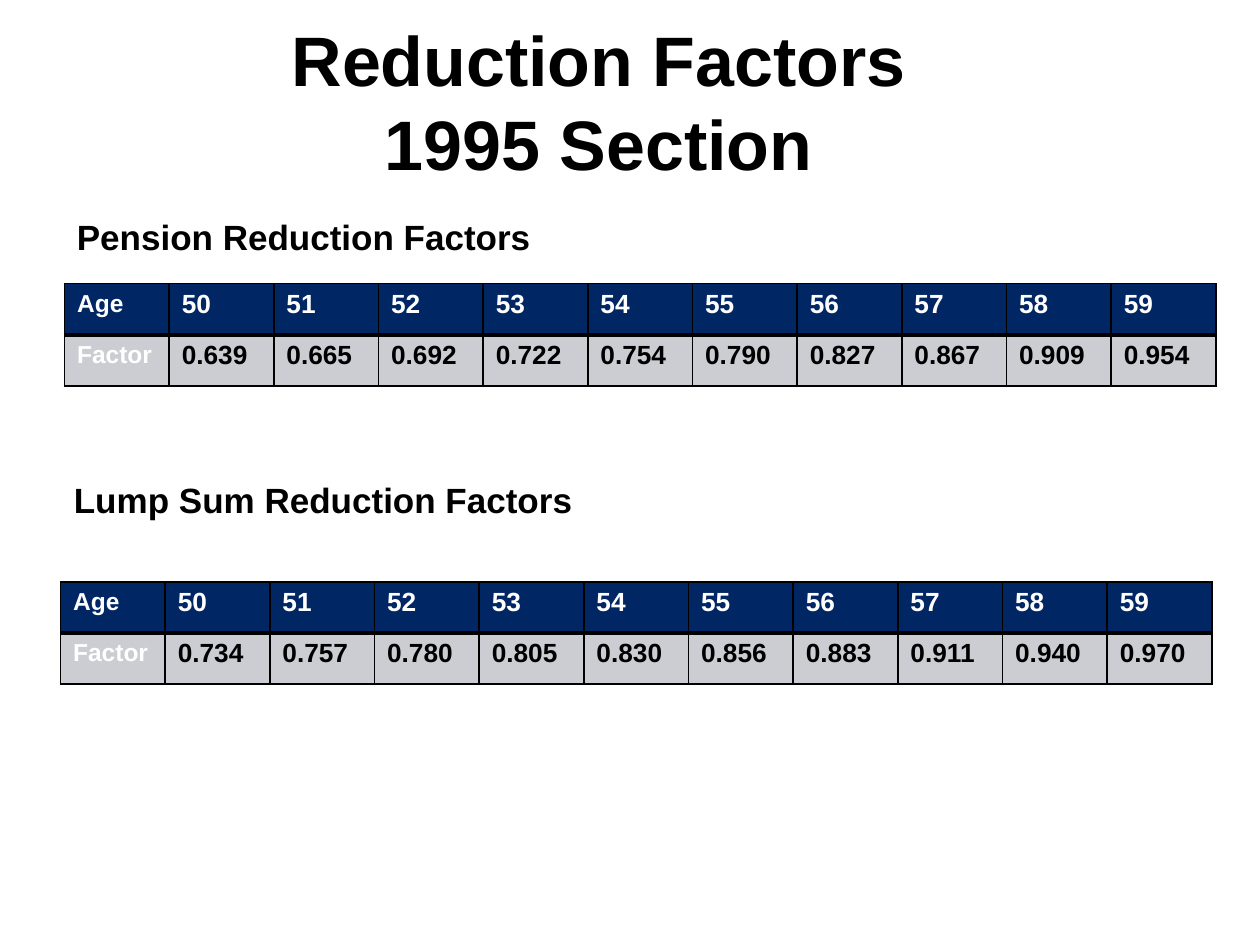
"""Build the slide of pension and lump sum reduction factors."""
from lxml import etree
from pptx import Presentation
from pptx.dml.color import RGBColor
from pptx.enum.text import MSO_ANCHOR, MSO_AUTO_SIZE, PP_ALIGN
from pptx.oxml.ns import qn
from pptx.util import Cm, Pt

MIDDLE = MSO_ANCHOR.MIDDLE
GROW = MSO_AUTO_SIZE.SHAPE_TO_FIT_TEXT
FIXED = MSO_AUTO_SIZE.NONE
CENTER = PP_ALIGN.CENTER

BLACK = RGBColor(0x00, 0x00, 0x00)
WHITE = RGBColor(0xFF, 0xFF, 0xFF)
NAVY = RGBColor(0x00, 0x26, 0x64)
GREY = RGBColor(0xCC, 0xCD, 0xD3)

AGES = [str(age) for age in range(50, 60)]
PENSION = "0.639 0.665 0.692 0.722 0.754 0.790 0.827 0.867 0.909 0.954".split()
LUMP_SUM = "0.734 0.757 0.780 0.805 0.830 0.856 0.883 0.911 0.940 0.970".split()


class FactorSlide:
    col_width = Cm(2.11)
    row_height = Cm(1.03)
    thin, thick = Pt(1), Pt(3)

    def __init__(self, prs):
        self.slide = prs.slides.add_slide(prs.slide_layouts[5])

    def set_text(self, tf, text, size, color=BLACK):
        tf.text = text
        p = tf.paragraphs[0]
        formats = {"name": "Arial", "size": Pt(size), "bold": True}
        for r in p.runs:
            for key, value in formats.items():
                setattr(r.font, key, value)
            r.font.color.rgb = color
        return p

    def title(self, text, left, top, width, height):
        sp = self.slide.shapes.title
        sp.left, sp.top, sp.width, sp.height = map(Cm, (left, top, width, height))
        tf = sp.text_frame
        tf.auto_size = FIXED
        tf.vertical_anchor = MIDDLE
        self.set_text(tf, text, 40).alignment = CENTER

    def heading(self, text, left, top):
        sp = self.slide.shapes.add_textbox(Cm(left), Cm(top), Cm(11), Cm(1.12))
        tf = sp.text_frame
        tf.word_wrap = True
        tf.auto_size = GROW
        self.set_text(tf, text, 20)

    def borders(self, cell, widths):
        tcPr = cell._tc.get_or_add_tcPr()
        for side, width in widths.items():
            ln = etree.SubElement(tcPr, qn(f"a:ln{side}"), w=str(width))
            fill = etree.SubElement(ln, qn("a:solidFill"))
            etree.SubElement(fill, qn("a:srgbClr"), val=str(BLACK))

    def table(self, factors, left, top):
        rows = [["Age", *AGES], ["Factor", *factors]]
        cols = len(rows[0])
        frame = self.slide.shapes.add_table(
            len(rows), cols, Cm(left), Cm(top),
            self.col_width * cols, self.row_height * len(rows))
        table = frame.table
        for col in table.columns:
            col.width = self.col_width
        for i, row in enumerate(rows):
            table.rows[i].height = self.row_height
            for j, text in enumerate(row):
                cell = table.cell(i, j)
                label, header = j == 0, i == 0
                self.set_text(cell.text_frame, text, 14 if label else 15,
                              WHITE if label or header else BLACK)
                self.borders(cell, {
                    "L": self.thin, "R": self.thin,
                    "T": self.thin if header else self.thick,
                    "B": self.thick if header else self.thin})
                cell.fill.solid()
                cell.fill.fore_color.rgb = NAVY if header else GREY


def main():
    prs = Presentation()
    prs.slide_width, prs.slide_height = Cm(25.4), Cm(19.05)
    s = FactorSlide(prs)
    s.title("Reduction Factors\v1995 Section", 1.27, 0.43, 21.59, 3.18)
    s.table(PENSION, 1.3, 5.72)
    s.heading("Pension Reduction Factors", 1.3, 4.22)
    s.heading("Lump Sum Reduction Factors", 1.24, 9.53)
    s.table(LUMP_SUM, 1.22, 11.73)
    prs.save("out.pptx")


if __name__ == "__main__":
    main()
